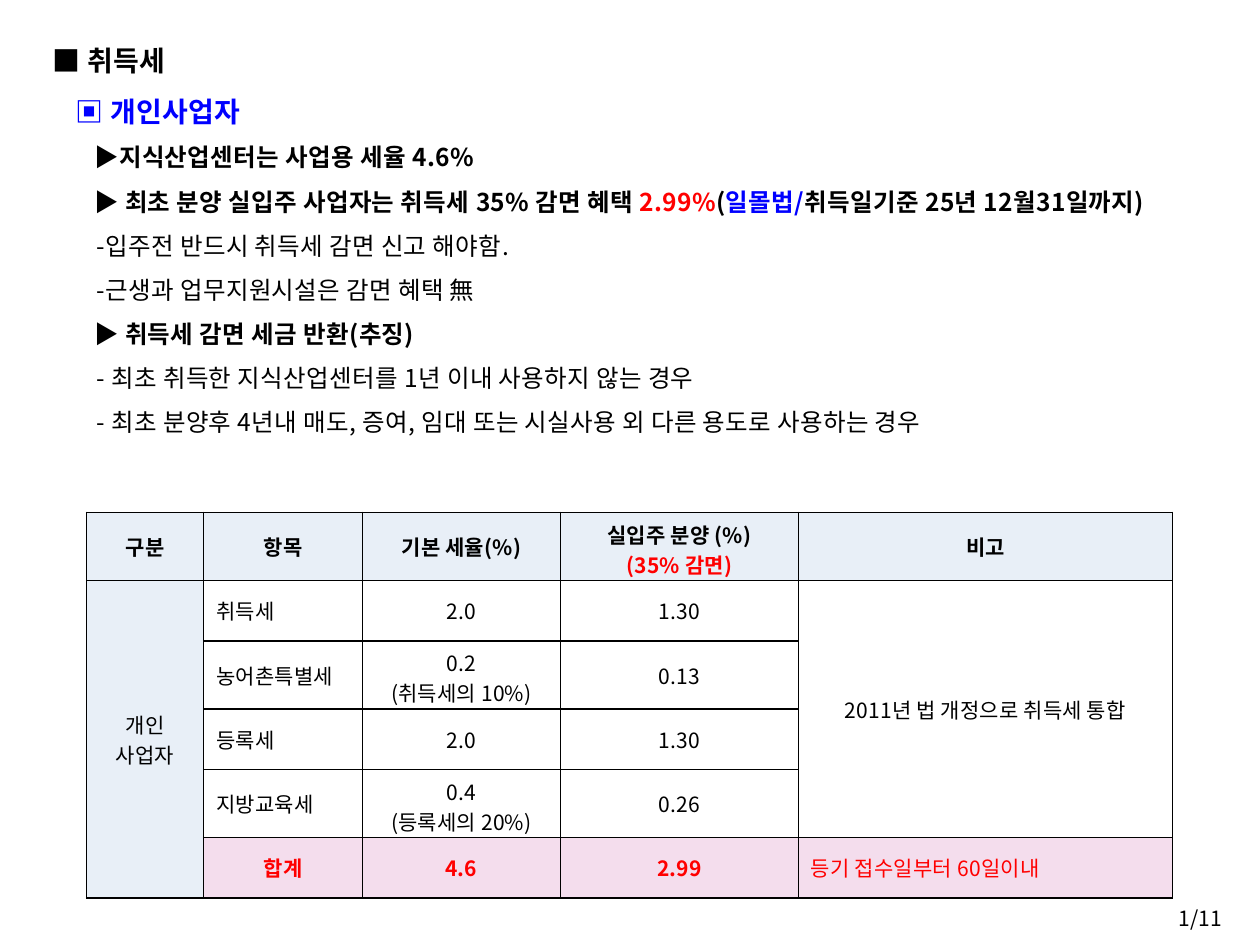
from lxml import etree
from pptx import Presentation
from pptx.dml.color import RGBColor
from pptx.enum.text import MSO_ANCHOR, PP_ALIGN
from pptx.oxml.ns import qn
from pptx.util import Inches, Pt

MIDDLE = MSO_ANCHOR.MIDDLE
LEFT, CENTER, RIGHT = PP_ALIGN.LEFT, PP_ALIGN.CENTER, PP_ALIGN.RIGHT
FONT = "Noto Sans CJK KR"
BLACK, RED, BLUE = "000000", "FF0000", "0000FF"
HEADER_FILL, TOTAL_FILL, WHITE = "E8EFF7", "F4DDED", "FFFFFF"
OUTLINE_SPACING, TABLE_SPACING = 19, 12


def color(value):
    return RGBColor.from_string(value)


def add_span(para, text, size, ink=BLACK, bold=False, spacing=TABLE_SPACING):
    span = para.add_run()
    span.text = text
    span.font.size = Pt(size)
    span.font.bold = bold
    span.font.name = FONT
    span.font.color.rgb = color(ink)
    span.font._element.set("spc", str(spacing))
    etree.SubElement(span.font._element, qn("a:ea"), typeface=FONT)


deck = Presentation()
deck.slide_width, deck.slide_height = Inches(10), Inches(7.5)
column, row = deck.slide_width // 100, deck.slide_height // 100
page = deck.slides.add_slide(deck.slide_layouts[6])

outline = [
    (0, 16, True, [("■ 취득세", BLACK)]),
    (1.85, 16, True, [("▣ 개인사업자", BLUE)]),
    (3.3, 14, True, [("▶지식산업센터는 사업용 세율 4.6%", BLACK)]),
    (3.3, 14, True, [("▶ 최초 분양 실입주 사업자는 취득세 35% 감면 혜택 ", BLACK),
                     ("2.99%", RED), ("(", BLACK), ("일몰법/", BLUE),
                     ("취득일기준 25년 12월31일까지)", BLACK)]),
    (3.5, 14, False, [("-입주전 반드시 취득세 감면 신고 해야함.", BLACK)]),
    (3.5, 14, False, [("-근생과 업무지원시설은 감면 혜택 無", BLACK)]),
    (3.3, 14, True, [("▶ 취득세 감면 세금 반환(추징)", BLACK)]),
    (3.5, 14, False, [("- 최초 취득한 지식산업센터를 1년 이내 사용하지 않는 경우", BLACK)]),
    (3.5, 14, False, [("- 최초 분양후 4년내 매도, 증여, 임대 또는 시실사용 외 다른 용도로 사용하는 경우", BLACK)]),
]
box = page.shapes.add_textbox(int(3.2 * column), int(3.7 * row), int(93.7 * column), int(46.1 * row))
frame = box.text_frame
frame.word_wrap = True
frame.vertical_anchor = MIDDLE
frame.margin_bottom = int(5.1 * row)
for number, (indent, size, bold, spans) in enumerate(outline):
    para = frame.add_paragraph() if number else frame.paragraphs[0]
    para.line_spacing = 1.5
    properties = para._p.get_or_add_pPr()
    properties.set("marL", "0")
    properties.set("indent", str(int(indent * column)))
    for text, ink in spans:
        add_span(para, text, size, ink, bold, OUTLINE_SPACING)

number_box = page.shapes.add_textbox(int(92.5 * column), int(95.2 * row), int(5.5 * column), int(3.9 * row))
number_box.text_frame.word_wrap = True
para = number_box.text_frame.paragraphs[0]
para.alignment = RIGHT
add_span(para, "1/11", 12)

rates = [
    ["구분", "항목", "기본 세율(%)", "실입주 분양 (%)\n(35% 감면)", "비고"],
    ["개인\n사업자", "취득세", "2.0", "1.30", "2011년 법 개정으로 취득세 통합"],
    ["", "농어촌특별세", "0.2\n(취득세의 10%)", "0.13", ""],
    ["", "등록세", "2.0", "1.30", ""],
    ["", "지방교육세", "0.4\n(등록세의 20%)", "0.26", ""],
    ["", "합계", "4.6", "2.99", "등기 접수일부터 60일이내"],
]
widths = [9.3, 12.6, 15.7, 18.9, 29.7]
heights = [7.2, 6.4] * 3
last_row, last_column = len(heights) - 1, len(widths) - 1
table = page.shapes.add_table(
    len(heights), len(widths), int(6.87 * column), int(54.22 * row),
    int(sum(widths) * column), int(sum(heights) * row)).table
for index, width in enumerate(widths):
    table.columns[index].width = int(width * column)
for index, height in enumerate(heights):
    table.rows[index].height = int(height * row)
table.cell(1, 0).merge(table.cell(last_row, 0))
table.cell(1, last_column).merge(table.cell(last_row - 1, last_column))

for r, texts in enumerate(rates):
    for c, text in enumerate(texts):
        cell = table.cell(r, c)
        cell.vertical_anchor = MIDDLE
        properties = cell._tc.get_or_add_tcPr()
        for side in ("a:lnL", "a:lnR", "a:lnT", "a:lnB"):
            line = etree.SubElement(properties, qn(side), w=str(Pt(1)))
            paint = etree.SubElement(line, qn("a:solidFill"))
            etree.SubElement(paint, qn("a:srgbClr"), val=BLACK)
        total = r == last_row and c > 0
        header = r == 0 or c == 0
        cell.fill.solid()
        cell.fill.fore_color.rgb = color(TOTAL_FILL if total else HEADER_FILL if header else WHITE)
        if not text:
            continue
        item = c == 1 and 0 < r < last_row
        deadline = total and c == last_column
        cell.text_frame.text = text
        for para in cell.text_frame.paragraphs:
            words = para.text
            para.clear()
            para.alignment = LEFT if item or deadline else CENTER
            ink = RED if total or words == "(35% 감면)" else BLACK
            add_span(para, words, 12, ink, (r == 0 or total) and not deadline)

deck.save("out.pptx")
